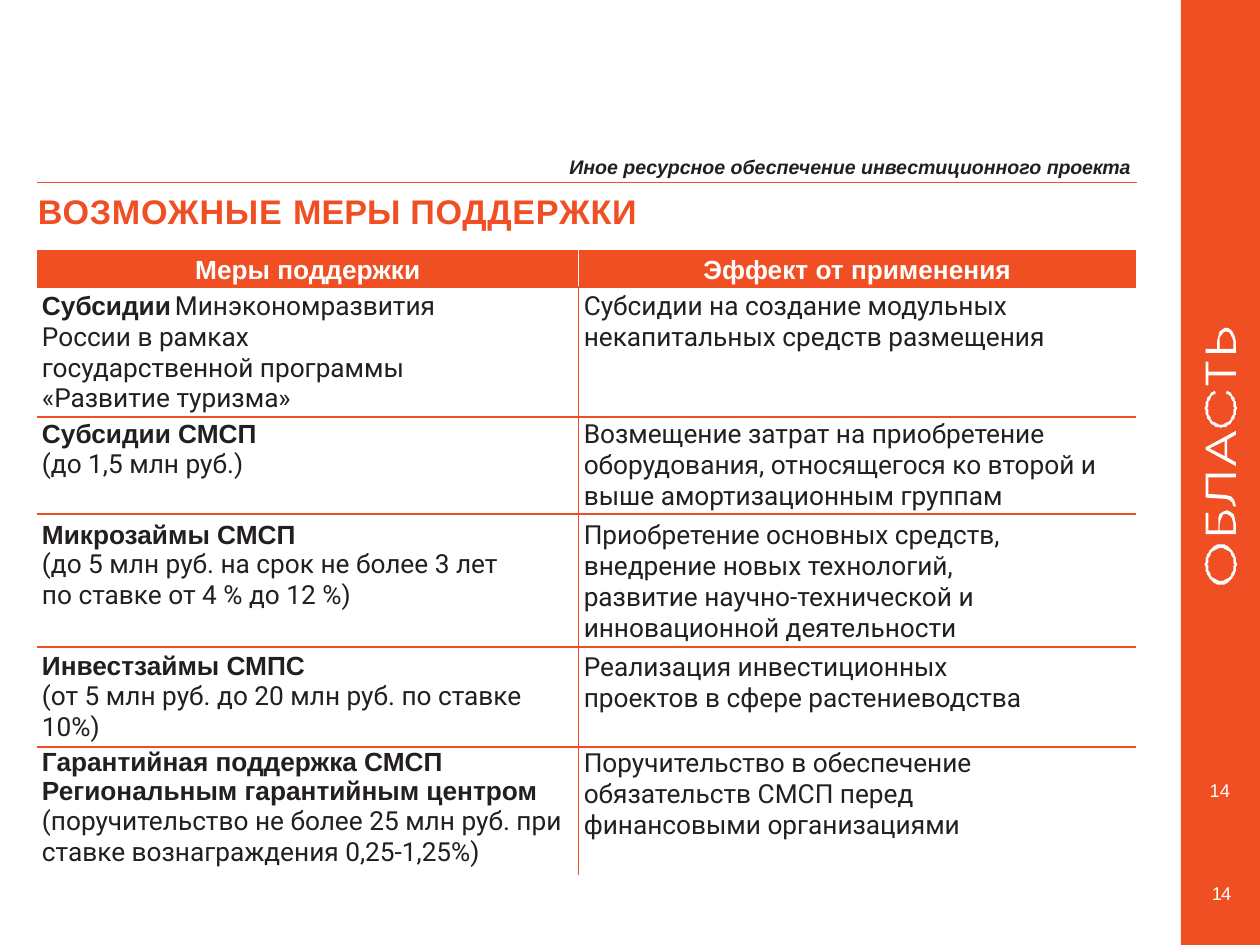
from math import cos, radians, sin

from lxml import etree
from pptx import Presentation
from pptx.dml.color import RGBColor
from pptx.enum.shapes import MSO_CONNECTOR, MSO_SHAPE
from pptx.enum.text import MSO_ANCHOR, PP_ALIGN
from pptx.oxml.ns import qn
from pptx.util import Pt

LEFT, CENTER = PP_ALIGN.LEFT, PP_ALIGN.CENTER
TOP = MSO_ANCHOR.TOP
RECTANGLE, STRAIGHT = MSO_SHAPE.RECTANGLE, MSO_CONNECTOR.STRAIGHT
color = RGBColor.from_string
ORANGE, DARK, WHITE = "F04E23", "231F20", "FFFFFF"


def add_span(para, text, size, font_color, spacing=0, **formats):
    span = para.add_run()
    span.text = text
    for name, value in {"name": "Arial", "size": Pt(size), "bold": False, **formats}.items():
        setattr(span.font, name, value)
    span.font.color.rgb = color(font_color)
    if spacing:
        span.font._element.set("spc", str(round(spacing * 100)))


def arc(center_y, radius_x, radius_y, start, end):
    steps = range(start, end + 1, 6) if start < end else range(start, end - 1, -6)
    return [(969 + radius_x * cos(radians(angle)), center_y + radius_y * sin(radians(angle)))
            for angle in steps]


deck = Presentation()
deck.slide_width, deck.slide_height = Pt(720), Pt(540)
page = deck.slides.add_slide(deck.slide_layouts[5])

band = page.shapes.add_shape(RECTANGLE, Pt(674.8), 0, Pt(45.2), Pt(540))
band.shadow.inherit = False
band.fill.solid()
band.fill.fore_color.rgb = color(ORANGE)
band.line.fill.background()

letters = [
    [arc(448, 12.5, 16, 0, 354), arc(448, 10.5, 13, 354, 0)],
    [[(959, 407), (957, 407), (957, 424), (981, 424), (981, 416), (980, 411), (979, 408),
      (976, 406), (974, 405), (971, 406), (968, 408), (967, 411), (967, 421), (959, 421)],
     [(968, 421), (968, 416), (969, 412), (971, 408), (974, 408), (977, 410), (978, 412),
      (979, 416), (979, 421)]],
    [[(981, 376), (957, 376), (957, 395), (973, 396), (976, 397), (978, 399), (979, 402),
      (981, 402), (980, 398), (979, 396), (977, 394), (973, 393), (959, 392), (959, 379),
      (981, 379)]],
    [[(981, 342), (957, 355), (957, 357), (981, 370), (981, 367), (974, 363), (974, 349),
      (981, 345)],
     [(972, 350), (960, 356), (972, 362)]],
    [arc(324, 12.5, 15.5, -66, 246) + arc(324, 10.5, 13, 246, -66)],
    [[(959, 287), (957, 287), (957, 306), (959, 306), (959, 298), (981, 298), (981, 295),
      (959, 295)]],
    [[(957, 277), (957, 280), (981, 280), (981, 271), (980, 267), (978, 263), (976, 261),
      (973, 260), (971, 261), (968, 263), (967, 267), (966, 271), (966, 277)],
     [(968, 277), (968, 268), (971, 264), (973, 263), (976, 264), (978, 268), (979, 271),
      (979, 277)]],
]
outline = page.shapes.build_freeform(*letters[0][0][0], scale=Pt(0.72))
for letter in letters:
    for contour in letter:
        outline.move_to(*contour[0])
        outline.add_line_segments(contour[1:], close=True)
region = outline.convert_to_shape()
region.shadow.inherit = False
region.fill.solid()
region.fill.fore_color.rgb = color(WHITE)
region.line.fill.background()

title = page.shapes.title
title.left, title.top, title.width, title.height = Pt(21), Pt(107.3), Pt(356), Pt(24.5)
subject, number, lower_number = [
    page.shapes.add_textbox(*map(Pt, place))
    for place in [(324.7, 87.1, 332, 14.4), (690.5, 443.5, 17, 13.7), (689, 502.6, 22, 14.4)]]
dark_italic = {"bold": True, "italic": True}
labels = [
    (title, 0.7, [("ВОЗМОЖНЫЕ ", 0.4), ("МЕРЫ ", 0), ("ПОДДЕРЖКИ", 0.4)], 19.5, ORANGE, {"bold": True}),
    (subject, 0.7, [("Иное ресурсное обеспечение инвестиционного ", 0), ("проекта", -0.1)],
     11.2, DARK, dark_italic),
    (number, 0.7, [("14", 0.2)], 10.5, WHITE, {}),
    (lower_number, 3.6, [("14", -0.5)], 10.5, WHITE, {}),
]
for box, indent, spans, size, font_color, formats in labels:
    frame = box.text_frame
    for name, value in {"margin_left": Pt(indent), "margin_right": 0, "margin_top": Pt(1.5),
                        "margin_bottom": 0, "word_wrap": True, "vertical_anchor": TOP}.items():
        setattr(frame, name, value)
    para = frame.paragraphs[0]
    para.alignment = LEFT
    for text, spacing in spans:
        add_span(para, text, size, font_color, spacing, **formats)

rule = page.shapes.add_connector(STRAIGHT, Pt(21.3), Pt(104.4), Pt(649.7), Pt(104.4))
rule.line.color.rgb = color(ORANGE)
rule.line.width = Pt(0.5)
etree.SubElement(rule._element.spPr, qn("a:effectLst"))

measures = [
    (21.1, 2.9, 0, 0, [[("Меры поддержки", True)]], [[("Эффект от применения", True)]]),
    (74.3, 2.2, 73, 0,
     [[("Субсидии", True), (" ", True),
       ("Минэкономразвития России в рамках государственной программы «Развитие туризма»", False)]],
     [[("Субсидии на создание модульных некапитальных средств размещения", False)]]),
    (55.4, 1.4, 0, 0,
     [[("Субсидии СМСП", True)], [("(до 1,5 млн руб.)", False)]],
     [[("Возмещение затрат на приобретение оборудования, относящегося ко второй "
        "и выше амортизационным группам", False)]]),
    (76, 3.6, 0, 57,
     [[("Микрозаймы СМСП", True)],
      [("(до 5 млн руб. на срок не более 3 лет \vпо ставке от 4 % до 12 %)", False)]],
     [[("Приобретение основных средств, внедрение новых технологий, развитие "
        "научно-технической и инновационной деятельности", False)]]),
    (56.6, 2.9, 6, 57,
     [[("Инвестзаймы СМПС", True)],
      [("(от 5 млн руб. до 20 млн руб. по ставке 10%)", False)]],
     [[("Реализация инвестиционных проектов в сфере растениеводства", False)]]),
    (73.1, 0.7, 6, 57,
     [[("Гарантийная поддержка СМСП Региональным гарантийным центром", True)],
      [("(поручительство не более 25 млн руб. при ставке вознаграждения 0,25-1,25%)", False)]],
     [[("Поручительство в обеспечение обязательств СМСП перед финансовыми организациями", False)]]),
]
heights = [measure[0] for measure in measures]
table = page.shapes.add_table(len(measures), 2, Pt(21.1), Pt(143), Pt(627.9), Pt(sum(heights))).table
table.first_row = table.horz_banding = False
table.columns[0].width, table.columns[1].width = Pt(309.6), Pt(318.3)
last = len(measures) - 1

for row, (height, top, left_gap, right_gap, *contents) in enumerate(measures):
    table.rows[row].height = Pt(height)
    header = row == 0
    for column, paragraphs in enumerate(contents):
        cell = table.cell(row, column)
        for name, value in {"margin_left": 0 if header else Pt(2.9), "margin_top": Pt(top),
                            "margin_right": Pt((left_gap, right_gap)[column]),
                            "margin_bottom": 0, "vertical_anchor": TOP}.items():
            setattr(cell, name, value)
        divider = WHITE if header else ORANGE
        borders = {"a:lnL": divider if column else None, "a:lnR": None if column else divider,
                   "a:lnT": None if header else ORANGE, "a:lnB": None if row == last else ORANGE}
        for tag, border_color in borders.items():
            edge = etree.SubElement(cell._tc.get_or_add_tcPr(), qn(tag), w=str(Pt(1)))
            if border_color:
                paint = etree.SubElement(edge, qn("a:solidFill"))
                etree.SubElement(paint, qn("a:srgbClr"), val=border_color)
            else:
                etree.SubElement(edge, qn("a:noFill"))
        if header:
            cell.fill.solid()
            cell.fill.fore_color.rgb = color(ORANGE)
        else:
            cell.fill.background()
        for index, spans in enumerate(paragraphs):
            para = cell.text_frame.add_paragraph() if index else cell.text_frame.paragraphs[0]
            para.alignment = CENTER if header else LEFT
            for text, bold in spans:
                for part, line in enumerate(text.split("\v")):
                    if part:
                        para.add_line_break()
                    add_span(para, line, 8 if text == " " else 15, WHITE if header else DARK,
                             bold=bold, name="Arial" if bold else "Roboto")

deck.save("out.pptx")
